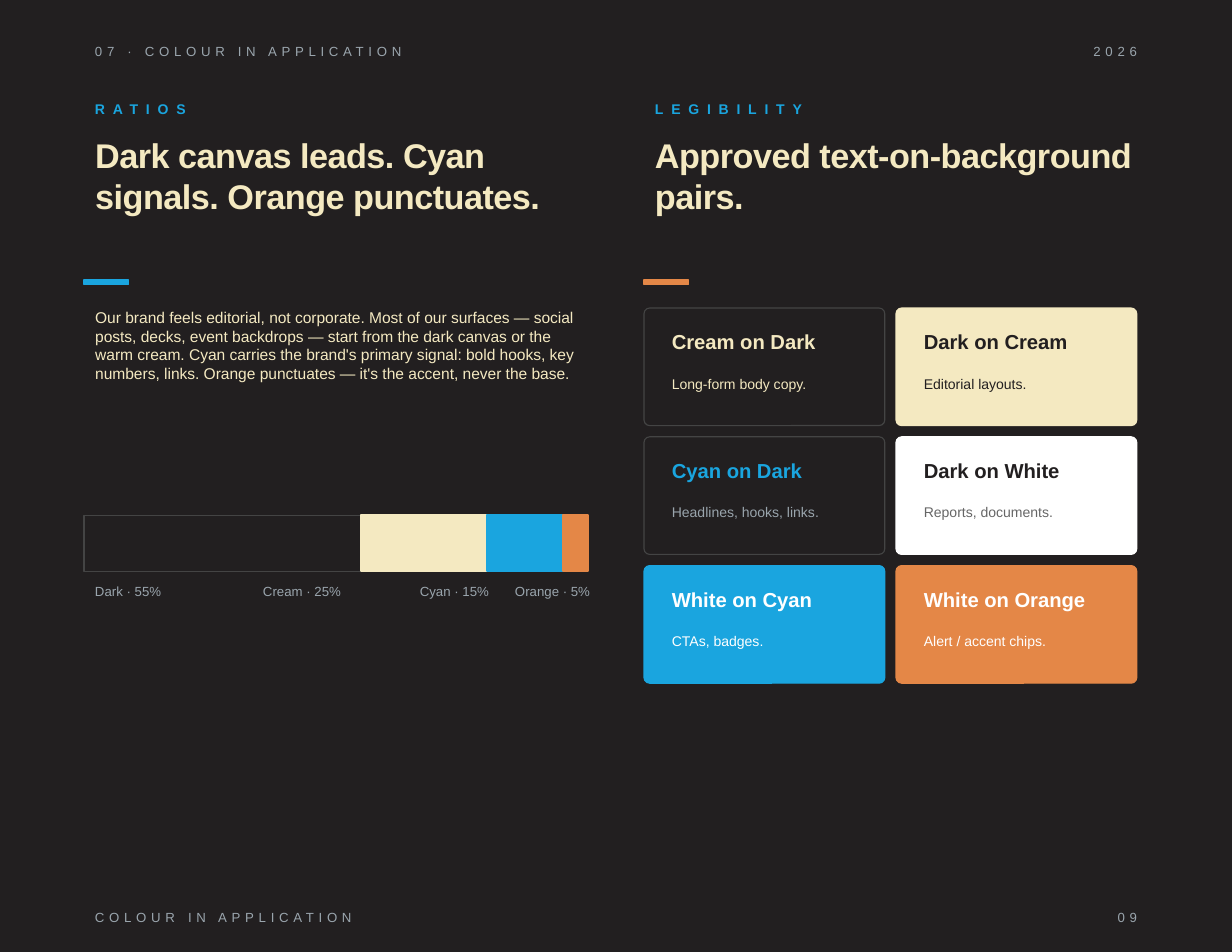
from pptx import Presentation
from pptx.dml.color import RGBColor
from pptx.enum.shapes import MSO_SHAPE as SHAPE
from pptx.enum.text import MSO_ANCHOR as ANCHOR, MSO_AUTO_SIZE as AUTO, PP_ALIGN as ALIGN
from pptx.oxml.ns import qn
from pptx.util import Inches, Pt

DARK, CREAM, CYAN, ORANGE = "221F20", "F4E9C1", "1AA5DF", "E48747"
WHITE, GREY, MID, EDGE = "FFFFFF", "9AA5AD", "666666", "444444"

LEFT, RIGHT, COL_W = 0.75, 5.75, 4.5
CARD_W, CARD_H, GAP, CARD_TOP = 2.15, 1.05, 0.1, 2.75
BAR_TOP, BAR_H, LABEL_TOP = 4.6, 0.5, 5.15

# name, share, fill, line, line width, left of label
RATIOS = [
    ("Dark", 55, DARK, EDGE, 0.75, 0.75),
    ("Cream", 25, CREAM, CREAM, 1, 2.25),
    ("Cyan", 15, CYAN, CYAN, 1, 3.65),
    ("Orange", 5, ORANGE, ORANGE, 1, 4.5),
]
# heading, use, fill, line, heading colour, use colour
PAIRS = [
    ("Cream on Dark", "Long-form body copy.", DARK, EDGE, CREAM, CREAM),
    ("Dark on Cream", "Editorial layouts.", CREAM, CREAM, DARK, DARK),
    ("Cyan on Dark", "Headlines, hooks, links.", DARK, EDGE, CYAN, GREY),
    ("Dark on White", "Reports, documents.", WHITE, WHITE, DARK, MID),
    ("White on Cyan", "CTAs, badges.", CYAN, CYAN, WHITE, WHITE),
    ("White on Orange", "Alert / accent chips.", ORANGE, ORANGE, WHITE, WHITE),
]
BODY = ("Our brand feels editorial, not corporate. Most of our surfaces — social posts, "
        "decks, event backdrops — start from the dark canvas or the warm cream. Cyan "
        "carries the brand's primary signal: bold hooks, key numbers, links. Orange "
        "punctuates — it's the accent, never the base.")


def rgb(color):
    return RGBColor.from_string(color)


def write(sp, box, text, size, color, bold=False, spacing=0,
          align=ALIGN.LEFT, anchor=ANCHOR.TOP):
    """Place a text box or placeholder and fill it with one formatted run."""
    sp.left, sp.top, sp.width, sp.height = map(Inches, box)
    tf = sp.text_frame
    tf.word_wrap, tf.auto_size, tf.vertical_anchor = True, AUTO.NONE, anchor
    p = tf.paragraphs[0]
    p.alignment = align
    r = p.add_run()
    r.text = text
    r.font.name, r.font.size, r.font.bold = "Arial", Pt(size), bold
    r.font.color.rgb = rgb(color)
    if spacing:
        r.font._element.set("spc", str(round(spacing * 100)))
    return p


def add_text(s, box, *args, **style):
    return write(s.shapes.add_textbox(0, 0, 0, 0), box, *args, **style)


def add_block(s, kind, box, fill, line, width):
    sp = s.shapes.add_shape(kind, *map(Inches, box))
    sp.shadow.inherit = False
    sp.fill.solid()
    sp.fill.fore_color.rgb = rgb(fill)
    sp.line.color.rgb = rgb(line)
    sp.line.width = Pt(width)
    return sp


def add_running_line(s, top, left_text, right_text):
    style = dict(spacing=3, anchor=ANCHOR.MIDDLE)
    add_text(s, (LEFT, top, 6, 0.28), left_text, 8.5, GREY, **style)
    add_text(s, (6.5, top, 3.75, 0.28), right_text, 8.5, GREY, align=ALIGN.RIGHT, **style)


def add_column_head(s, sp, left, label, heading, accent):
    add_text(s, (left, 0.85, COL_W, 0.25), label, 9, CYAN, bold=True, spacing=5,
             anchor=ANCHOR.MIDDLE)
    write(sp, (left, 1.15, COL_W, 1.2), heading, 22, CREAM, bold=True, spacing=-0.3)
    add_block(s, SHAPE.RECTANGLE, (left, 2.5, 0.4, 0.04), accent, accent, 1)


def write_body(sp):
    p = write(sp, (LEFT, 2.7, COL_W, 1.6), BODY, 10, CREAM)
    p.space_before, p.space_after = Pt(0), Pt(6)
    pPr = p._p.get_or_add_pPr()
    pPr.set("marL", "0")
    pPr.set("indent", "0")
    pPr.append(pPr.makeelement(qn("a:buNone"), {}))


def add_ratio_bar(s):
    left = LEFT
    for name, share, fill, line, line_w, label_left in RATIOS:
        w = COL_W * share / 100
        add_block(s, SHAPE.RECTANGLE, (left, BAR_TOP, w, BAR_H), fill, line, line_w)
        add_text(s, (label_left, LABEL_TOP, 1.1, 0.25), f"{name} · {share}%", 8.5, GREY,
                 anchor=ANCHOR.MIDDLE)
        left += w


def add_pair_cards(s):
    for i, (heading, use, fill, line, head_color, use_color) in enumerate(PAIRS):
        row, col = divmod(i, 2)
        left = RIGHT + col * (CARD_W + GAP)
        top = CARD_TOP + row * (CARD_H + GAP)
        card = add_block(s, SHAPE.ROUNDED_RECTANGLE, (left, top, CARD_W, CARD_H),
                         fill, line, 0.75)
        card.adjustments[0] = 0.048
        text_left, text_w = left + 0.15, CARD_W - 0.3
        add_text(s, (text_left, top + 0.14, text_w, 0.4), heading, 13, head_color, bold=True)
        add_text(s, (text_left, top + 0.55, text_w, 0.4), use, 9, use_color)


def main():
    prs = Presentation()
    prs.slide_width, prs.slide_height = Inches(11), Inches(8.5)
    s = prs.slides.add_slide(prs.slide_layouts[1])
    s.background.fill.solid()
    s.background.fill.fore_color.rgb = rgb(DARK)

    add_running_line(s, 0.32, "07 · COLOUR IN APPLICATION", "2026")
    add_column_head(s, s.shapes.title, LEFT, "RATIOS",
                    "Dark canvas leads. Cyan signals. Orange punctuates.", CYAN)
    write_body(s.placeholders[1])
    add_ratio_bar(s)
    add_column_head(s, s.shapes.add_textbox(0, 0, 0, 0), RIGHT, "LEGIBILITY",
                    "Approved text-on-background pairs.", ORANGE)
    add_pair_cards(s)
    add_running_line(s, 8.05, "COLOUR IN APPLICATION", "09")
    prs.save("out.pptx")


if __name__ == "__main__":
    main()
